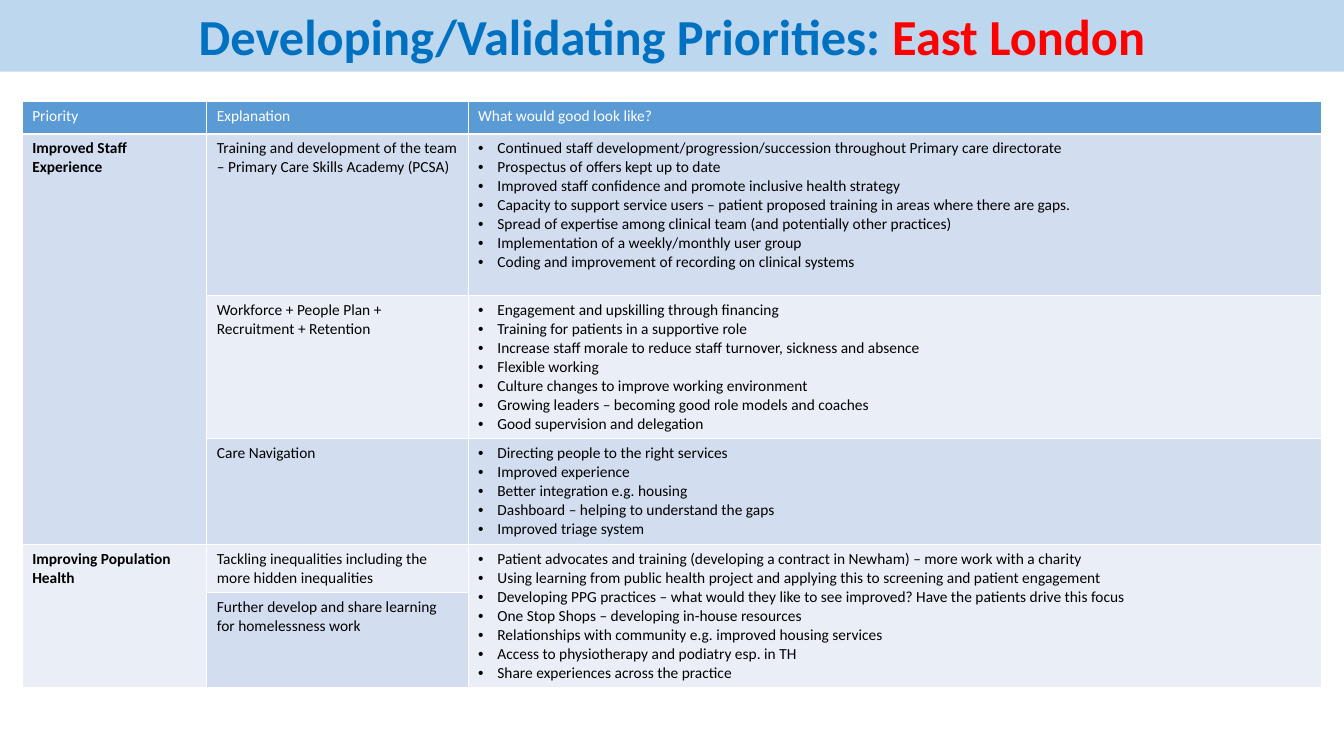
from lxml.etree import SubElement
from pptx import Presentation
from pptx.dml.color import RGBColor
from pptx.enum.shapes import MSO_SHAPE
from pptx.enum.text import MSO_ANCHOR, PP_ALIGN
from pptx.oxml.ns import qn
from pptx.util import Inches, Pt

COLORS = {
    "banner": "BDD7EE",
    "title": "0070C0",
    "place": "FF0000",
    "header": "5B9BD5",
    "dark_band": "D2DEEF",
    "light_band": "EAEFF7",
    "text": "000000",
    "white": "FFFFFF",
}
FONT = "Calibri"

HEADINGS = ["Priority", "Explanation", "What would good look like?"]
COLUMN_WIDTHS = [1.83, 2.59, 8.46]
ROW_HEIGHTS = [0.32, 1.6, 1.42, 1.05, 0.48, 0.94]
PRIORITIES = [
    ("Improved Staff Experience", 1, 3),
    ("Improving Population Health", 4, 5),
]
EXPLANATIONS = [
    "Training and development of the team – Primary Care Skills Academy (PCSA)",
    "Workforce + People Plan + Recruitment + Retention",
    "Care Navigation",
    "Tackling inequalities including the more hidden inequalities",
    "Further develop and share learning for homelessness work",
]
OUTCOMES = [
    [
        "Continued staff development/progression/succession throughout Primary care directorate",
        "Prospectus of offers kept up to date",
        "Improved staff confidence and promote inclusive health strategy",
        "Capacity to support service users – patient proposed training in areas where there are gaps.",
        "Spread of expertise among clinical team (and potentially other practices)",
        "Implementation of a weekly/monthly user group",
        "Coding and improvement of recording on clinical systems",
    ],
    [
        "Engagement and upskilling through financing",
        "Training for patients in a supportive role",
        "Increase staff morale to reduce staff turnover, sickness and absence",
        "Flexible working",
        "Culture changes to improve working environment",
        "Growing leaders – becoming good role models and coaches",
        "Good supervision and delegation",
    ],
    [
        "Directing people to the right services",
        "Improved experience",
        "Better integration e.g. housing",
        "Dashboard – helping to understand the gaps",
        "Improved triage system",
    ],
    [
        "Patient advocates and training (developing a contract in Newham) – more work with a charity",
        "Using learning from public health project and applying this to screening and patient engagement",
        "Developing PPG practices – what would they like to see improved? Have the patients drive this focus",
        "One Stop Shops – developing in-house resources",
        "Relationships with community e.g. improved housing services",
        "Access to physiotherapy and podiatry esp. in TH",
        "Share experiences across the practice",
    ],
]


def color(name):
    return RGBColor.from_string(COLORS[name])


def add_run(paragraph, text, size, color_name, bold=False):
    run = paragraph.add_run()
    run.text = text
    run.font.name = FONT
    run.font.size = Pt(size)
    run.font.bold = bold
    run.font.color.rgb = color(color_name)


def add_bullet(paragraph):
    properties = paragraph._p.get_or_add_pPr()
    properties.set("marL", str(Inches(0.19)))
    properties.set("indent", str(-Inches(0.19)))
    SubElement(properties, qn("a:buFont"), typeface="Arial")
    SubElement(properties, qn("a:buChar"), char="•")


def style_cell(cell, fill_name):
    properties = cell._tc.get_or_add_tcPr()
    for side in "LRTB":
        line = SubElement(properties, qn(f"a:ln{side}"), w=str(Pt(1)))
        fill = SubElement(line, qn("a:solidFill"))
        SubElement(fill, qn("a:srgbClr"), val=COLORS["white"])
    cell.fill.solid()
    cell.fill.fore_color.rgb = color(fill_name)


def write_cell(cell, lines, color_name="text", bold=False, bullets=False):
    frame = cell.text_frame
    for index, text in enumerate(lines):
        paragraph = frame.add_paragraph() if index else frame.paragraphs[0]
        if bullets:
            add_bullet(paragraph)
        add_run(paragraph, text, 11, color_name, bold)


def add_banner(slide, left, top, width, height):
    banner = slide.shapes.add_shape(
        MSO_SHAPE.RECTANGLE, Inches(left), Inches(top), Inches(width), Inches(height)
    )
    banner.shadow.inherit = False
    banner.fill.solid()
    banner.fill.fore_color.rgb = color("banner")
    banner.line.fill.background()
    frame = banner.text_frame
    frame.word_wrap = True
    frame.vertical_anchor = MSO_ANCHOR.TOP
    paragraph = frame.paragraphs[0]
    paragraph.alignment = PP_ALIGN.CENTER
    add_run(paragraph, "Developing/Validating Priorities: ", 36, "title", True)
    add_run(paragraph, "East London", 36, "place", True)


def add_priorities_table(slide, left, top, width, height):
    table = slide.shapes.add_table(
        len(ROW_HEIGHTS), len(COLUMN_WIDTHS),
        Inches(left), Inches(top), Inches(width), Inches(height),
    ).table
    table.first_row = False
    table.horz_banding = False
    for column, share in zip(table.columns, COLUMN_WIDTHS):
        column.width = Inches(width * share / sum(COLUMN_WIDTHS))
    for row, share in zip(table.rows, ROW_HEIGHTS):
        row.height = Inches(height * share / sum(ROW_HEIGHTS))

    for column, heading in enumerate(HEADINGS):
        style_cell(table.cell(0, column), "header")
        write_cell(table.cell(0, column), [heading], "white")
    for row in range(1, len(ROW_HEIGHTS)):
        for column in range(len(COLUMN_WIDTHS)):
            style_cell(table.cell(row, column), "dark_band" if row % 2 else "light_band")

    for priority, first, last in PRIORITIES:
        table.cell(first, 0).merge(table.cell(last, 0))
        write_cell(table.cell(first, 0), [priority], bold=True)
    for row, explanation in enumerate(EXPLANATIONS, 1):
        write_cell(table.cell(row, 1), [explanation])
    table.cell(4, 2).merge(table.cell(5, 2))
    for row, outcomes in enumerate(OUTCOMES, 1):
        write_cell(table.cell(row, 2), outcomes, bullets=True)


def main():
    presentation = Presentation()
    presentation.slide_width = Inches(13.33)
    presentation.slide_height = Inches(7.5)
    slide = presentation.slides.add_slide(presentation.slide_layouts[6])
    add_priorities_table(slide, 0.22, 1.01, 12.89, sum(ROW_HEIGHTS))
    add_banner(slide, 0, 0, 13.33, 0.71)
    presentation.save("out.pptx")


if __name__ == "__main__":
    main()
